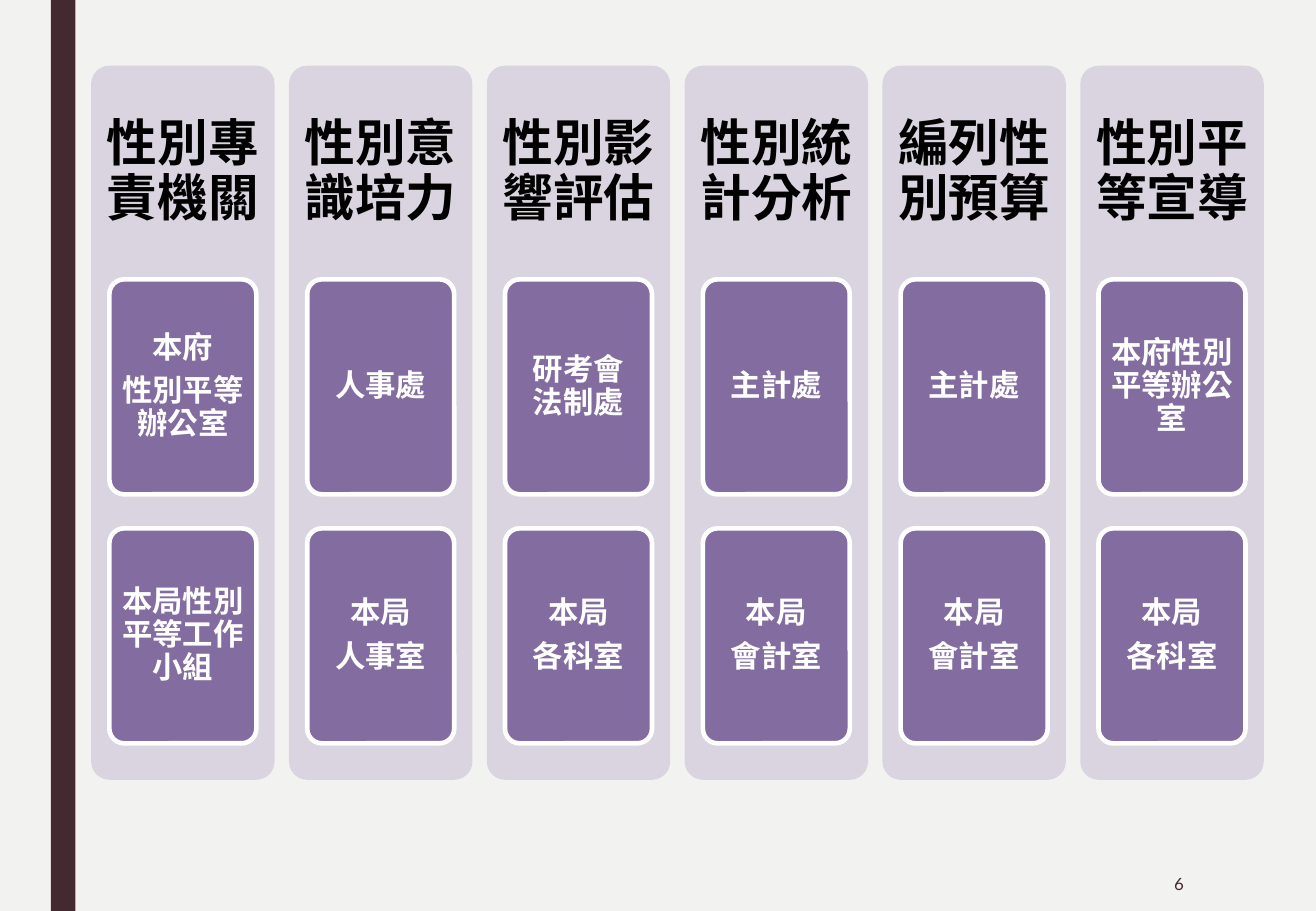
from pptx import Presentation
from pptx import util as u
from pptx.dml.color import RGBColor
from pptx.enum import lang, shapes, text

COLORS = {
    "paper": "F2F2F0",
    "stripe": "432A30",
    "panel": "D9D4DF",
    "card": "836C9F",
    "white": "FFFFFF",
    "black": "000000",
}

COLUMNS = [
    ("性別專責機關", ["本府", "性別平等辦公室"], ["本局性別平等工作小組"]),
    ("性別意識培力", ["人事處"], ["本局", "人事室"]),
    ("性別影響評估", ["研考會\n法制處"], ["本局", "各科室"]),
    ("性別統計分析", ["主計處"], ["本局", "會計室"]),
    ("編列性別預算", ["主計處"], ["本局", "會計室"]),
    ("性別平等宣導", ["本府性別平等辦公室"], ["本局", "各科室"]),
]

LEFT, TOP, COLUMN_STEP = 0.75, 0.54, 1.628
PANEL_WIDTH, PANEL_HEIGHT, HEADER_HEIGHT = 1.51, 5.88, 1.76
CARD_INDENT, CARD_WIDTH, CARD_HEIGHT = 0.15, 1.21, 1.77
CARD_TOP, CARD_STEP = 2.3, 2.05

deck = Presentation()
deck.slide_width, deck.slide_height = u.Inches(10.83), u.Inches(7.5)
page = deck.slides.add_slide(deck.slide_layouts[6])
page.background.fill.solid()
page.background.fill.fore_color.rgb = RGBColor.from_string(COLORS["paper"])


def add_block(kind, place, fill, line=None):
    block = page.shapes.add_shape(kind, *[u.Inches(length) for length in place])
    block.shadow.inherit = False
    block.fill.solid()
    block.fill.fore_color.rgb = RGBColor.from_string(COLORS[fill])
    if line:
        block.line.color.rgb = RGBColor.from_string(COLORS[line])
        block.line.width = u.Pt(2.75)
    else:
        block.line.fill.background()
    if kind == shapes.MSO_SHAPE.ROUNDED_RECTANGLE:
        block.adjustments[0] = 0.1
    return block


def write(box, paragraphs, size, color, insets, align=text.PP_ALIGN.CENTER, bold=True):
    frame = box.text_frame
    frame.word_wrap = True
    frame.vertical_anchor = text.MSO_ANCHOR.MIDDLE
    frame.margin_left = frame.margin_right = u.Inches(insets[0])
    frame.margin_top = frame.margin_bottom = u.Inches(insets[1])
    for number, wording in enumerate(paragraphs):
        para = frame.add_paragraph() if number else frame.paragraphs[0]
        para.alignment = align
        if bold:
            para.line_spacing = 0.9
            para.space_after = u.Pt(size * 0.35)
        for row, part in enumerate(wording.split("\n")):
            if row:
                para.add_line_break()
            span = para.add_run()
            span.text = part
            span.font.name = "Lato"
            span.font.size = u.Pt(size)
            span.font.bold = bold
            span.font.color.rgb = RGBColor.from_string(COLORS[color])
            span.font.language_id = lang.MSO_LANGUAGE_ID.TRADITIONAL_CHINESE


add_block(shapes.MSO_SHAPE.RECTANGLE, (0.42, 0, 0.2, 7.5), "stripe")

for column, (heading, *offices) in enumerate(COLUMNS):
    x = LEFT + column * COLUMN_STEP
    add_block(shapes.MSO_SHAPE.ROUNDED_RECTANGLE, (x, TOP, PANEL_WIDTH, PANEL_HEIGHT), "panel")
    header = page.shapes.add_textbox(
        u.Inches(x), u.Inches(TOP), u.Inches(PANEL_WIDTH), u.Inches(HEADER_HEIGHT))
    write(header, [heading], 30, "black", (0.12, 0.12))
    for row, office in enumerate(offices):
        place = (x + CARD_INDENT, CARD_TOP + row * CARD_STEP, CARD_WIDTH, CARD_HEIGHT)
        card = add_block(shapes.MSO_SHAPE.ROUNDED_RECTANGLE, place, "card", "white")
        write(card, office, 18, "white", (0.05, 0.04))

page_number = page.shapes.add_textbox(
    u.Inches(8.42), u.Inches(7.06), u.Inches(1.42), u.Inches(0.44))
write(page_number, ["6"], 10, "stripe", (0.1, 0.05), text.PP_ALIGN.RIGHT, False)

deck.save("out.pptx")
